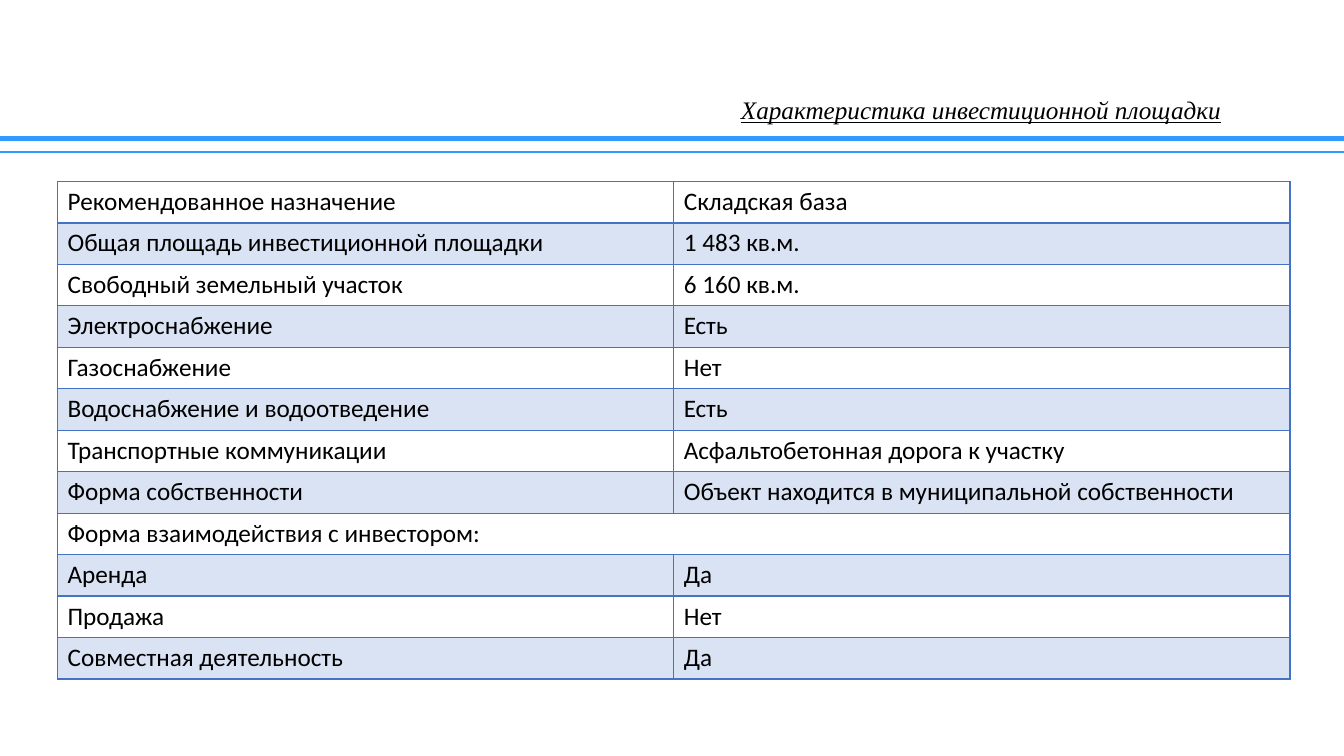
from dataclasses import dataclass

from lxml import etree
from pptx import Presentation
from pptx.dml.color import RGBColor
from pptx.enum.shapes import MSO_CONNECTOR
from pptx.enum.text import MSO_ANCHOR, PP_ALIGN
from pptx.oxml.ns import qn
from pptx.slide import Slide
from pptx.table import _Cell
from pptx.util import Cm, Pt

STRAIGHT = MSO_CONNECTOR.STRAIGHT
MIDDLE = MSO_ANCHOR.MIDDLE
CENTER = PP_ALIGN.CENTER

BLACK = RGBColor(0x00, 0x00, 0x00)
SKY = RGBColor(0x33, 0x99, 0xFF)
BLUE = RGBColor(0x44, 0x72, 0xC4)
PALE = RGBColor(0xDA, 0xE3, 0xF3)

WIDTH, HEIGHT = 33.87, 19.05
COL_WIDTH, ROW_HEIGHT = 15.53, 1.045
TITLE = "Характеристика инвестиционной площадки"


@dataclass
class Rule:
    top: float
    weight: float


@dataclass
class Fact:
    label: str
    value: str | None  # None: the label spans both columns


RULES = [Rule(3.5, 3.5), Rule(3.82, 1.5)]

FACTS = [
    Fact("Рекомендованное назначение", "Складская база"),
    Fact("Общая площадь инвестиционной площадки", "1 483 кв.м."),
    Fact("Свободный земельный участок", "6 160 кв.м."),
    Fact("Электроснабжение", "Есть"),
    Fact("Газоснабжение", "Нет"),
    Fact("Водоснабжение и водоотведение", "Есть"),
    Fact("Транспортные коммуникации", "Асфальтобетонная дорога к участку"),
    Fact("Форма собственности", "Объект находится в муниципальной собственности"),
    Fact("Форма взаимодействия с инвестором:", None),
    Fact("Аренда", "Да"),
    Fact("Продажа", "Нет"),
    Fact("Совместная деятельность", "Да"),
]


def draw_rule(slide: Slide, rule: Rule) -> None:
    line = slide.shapes.add_connector(
        STRAIGHT, Cm(0), Cm(rule.top), Cm(WIDTH), Cm(rule.top)
    )
    line.line.color.rgb = SKY
    line.line.width = Pt(rule.weight)
    etree.SubElement(line._element.spPr, qn("a:effectLst"))


def draw_title(slide: Slide) -> None:
    box = slide.shapes.add_textbox(Cm(16.94), Cm(2.46), Cm(15.57), Cm(0.69))
    frame = box.text_frame
    frame.word_wrap = True
    frame.vertical_anchor = MIDDLE
    frame.text = TITLE
    para = frame.paragraphs[0]
    para.alignment = CENTER
    para.line_spacing = 0.9
    font = para.runs[0].font
    font.name = "Times New Roman"
    font.size = Pt(18)
    font.italic = font.underline = True
    font.color.rgb = BLACK


def set_border(cell: _Cell, side: str, weight: float) -> None:
    props = cell._tc.get_or_add_tcPr()
    line = etree.SubElement(props, qn(f"a:ln{side}"), w=str(Pt(weight)))
    fill = etree.SubElement(line, qn("a:solidFill"))
    etree.SubElement(fill, qn("a:srgbClr"), val=str(BLUE))


def style_cell(cell: _Cell, row: int) -> None:
    """Draw the borders, then the band fill, which must follow them in XML."""
    for side in "LRTB":
        thick = (row, side) in ((0, "B"), (1, "T"))
        set_border(cell, side, 2 if thick else 1)
    if row % 2:
        cell.fill.solid()
        cell.fill.fore_color.rgb = PALE
    else:
        cell.fill.background()


def write_cell(cell: _Cell, text: str) -> None:
    cell.text_frame.text = text
    font = cell.text_frame.paragraphs[0].runs[0].font
    font.name = "Calibri"
    font.size = Pt(18)
    font.color.rgb = BLACK


def draw_table(slide: Slide) -> None:
    count = len(FACTS)
    table = slide.shapes.add_table(
        count, 2, Cm(1.45), Cm(4.57), Cm(2 * COL_WIDTH), Cm(count * ROW_HEIGHT)
    ).table
    table.first_row = table.horz_banding = False
    for col in table.columns:
        col.width = Cm(COL_WIDTH)
    for row, fact in enumerate(FACTS):
        table.rows[row].height = Cm(ROW_HEIGHT)
        left, right = table.cell(row, 0), table.cell(row, 1)
        for cell in (left, right):
            style_cell(cell, row)
        write_cell(left, fact.label)
        if fact.value is None:
            left.merge(right)
        else:
            write_cell(right, fact.value)


def main() -> None:
    deck = Presentation()
    deck.slide_width, deck.slide_height = Cm(WIDTH), Cm(HEIGHT)
    slide = deck.slides.add_slide(deck.slide_layouts[6])
    for rule in RULES:
        draw_rule(slide, rule)
    draw_title(slide)
    draw_table(slide)
    deck.save("out.pptx")


if __name__ == "__main__":
    main()
